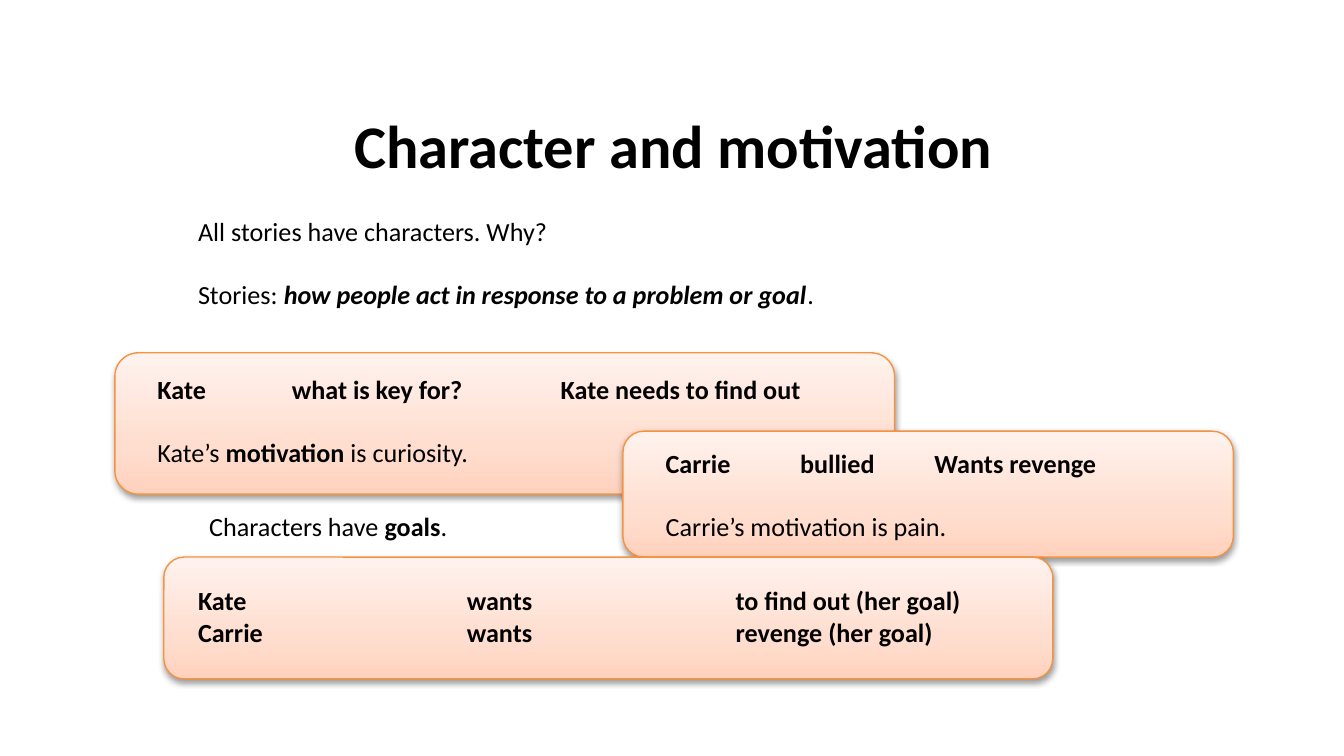
"""Build the slide on character and motivation."""
from lxml import etree
from pptx import Presentation
from pptx.dml.color import RGBColor
from pptx.enum.shapes import MSO_SHAPE
from pptx.enum.text import MSO_ANCHOR, PP_ALIGN
from pptx.oxml import parse_xml
from pptx.util import Pt

PX = 9525
TAB = 96
FONT = "Calibri"
ROUND_RECT = MSO_SHAPE.ROUNDED_RECTANGLE
CENTER = PP_ALIGN.CENTER
TOP, MIDDLE = MSO_ANCHOR.TOP, MSO_ANCHOR.MIDDLE
NS = "http://schemas.openxmlformats.org/drawingml/2006/main"
COLORS = {
    "text": "000000",
    "line": "F69240",
    "deep": "FFD2BD",
    "mid": "FFDED0",
    "pale": "FFF2ED",
    "shadow": "000000",
}
STOPS = [(0, "deep"), (35, "mid"), (100, "pale")]


def add_card(slide, box):
    s = slide.shapes.add_shape(ROUND_RECT, *[v * PX for v in box])
    s.line.color.rgb = RGBColor.from_string(COLORS["line"])
    s.line.width = Pt(0.75)
    props = s._element.spPr
    stops = "".join(
        f'<a:gs pos="{pos * 1000}"><a:srgbClr val="{COLORS[key]}"/></a:gs>'
        for pos, key in STOPS
    )
    props.insert(2, parse_xml(
        f'<a:gradFill xmlns:a="{NS}" rotWithShape="1"><a:gsLst>{stops}</a:gsLst>'
        '<a:lin ang="16200000" scaled="0"/></a:gradFill>'
    ))
    effects = etree.SubElement(props, f"{{{NS}}}effectLst")
    effects.append(parse_xml(
        f'<a:outerShdw xmlns:a="{NS}" blurRad="40000" dist="20000" dir="5400000" '
        f'rotWithShape="0"><a:srgbClr val="{COLORS["shadow"]}">'
        '<a:alpha val="38000"/></a:srgbClr></a:outerShdw>'
    ))


def add_text(slide, box, paragraphs):
    tf = slide.shapes.add_textbox(*[v * PX for v in box]).text_frame
    tf.word_wrap = True
    tf.vertical_anchor = TOP
    for i, (before, indent, runs) in enumerate(paragraphs):
        p = tf.paragraphs[0] if i == 0 else tf.add_paragraph()
        p.space_before = Pt(before)
        props = p._p.get_or_add_pPr()
        if indent:
            props.set("marL", str(indent * PX))
        if any("\t" in text for text, bold, italic in runs):
            tabs = etree.SubElement(props, f"{{{NS}}}tabLst")
            for n in range(1, 5):
                etree.SubElement(tabs, f"{{{NS}}}tab", pos=str(n * TAB * PX), algn="l")
        for text, bold, italic in runs:
            r = p.add_run()
            r.text = text
            r.font.name = FONT
            r.font.size = Pt(14)
            r.font.bold = bold
            r.font.italic = italic
            r.font.color.rgb = RGBColor.from_string(COLORS["text"])


prs = Presentation()
prs.slide_width, prs.slide_height = 960 * PX, 540 * PX
slide = prs.slides.add_slide(prs.slide_layouts[5])

title = slide.shapes.title
title.left, title.top, title.width, title.height = [v * PX for v in (49, 74, 864, 90)]
tf = title.text_frame
tf.vertical_anchor = MIDDLE
tf.margin_bottom = 37 * PX
p = tf.paragraphs[0]
p.alignment = CENTER
r = p.add_run()
r.text = "Character and motivation"
r.font.name = FONT
r.font.size = Pt(32.4)
r.font.bold = True
r.font.color.rgb = RGBColor.from_string(COLORS["text"])

add_card(slide, (82, 252, 557, 101))
add_text(slide, (103, 194, 513, 174), [
    (0, 29, [
        ("Stories: ", False, False),
        ("how people act in response to a problem or goal", True, True),
        (".", False, False),
    ]),
    (34, 0, [("Kate \twhat is key for?\tKate needs to find out", True, False)]),
    (17, 0, [
        ("Kate’s ", False, False),
        ("motivation", True, False),
        (" is curiosity.", False, False),
    ]),
])
add_text(slide, (132, 149, 355, 33), [
    (0, 0, [("All stories have characters. Why?", False, False)]),
])

add_card(slide, (445, 308, 436, 90))
add_text(slide, (466, 315, 429, 106), [
    (0, 0, [("Carrie\tbullied\tWants revenge", True, False)]),
    (17, 0, [("Carrie’s motivation is pain.", False, False)]),
])

add_card(slide, (117, 398, 635, 87))
add_text(slide, (132, 413, 589, 84), [
    (0, 0, [("Kate\t\twants\t\tto find out (her goal)", True, False)]),
    (0, 0, [("Carrie\t\twants\t\trevenge (her goal)", True, False)]),
])
add_text(slide, (140, 360, 236, 61), [
    (0, 0, [
        ("Characters have ", False, False),
        ("goals", True, False),
        (".", False, False),
    ]),
])

prs.save("out.pptx")
